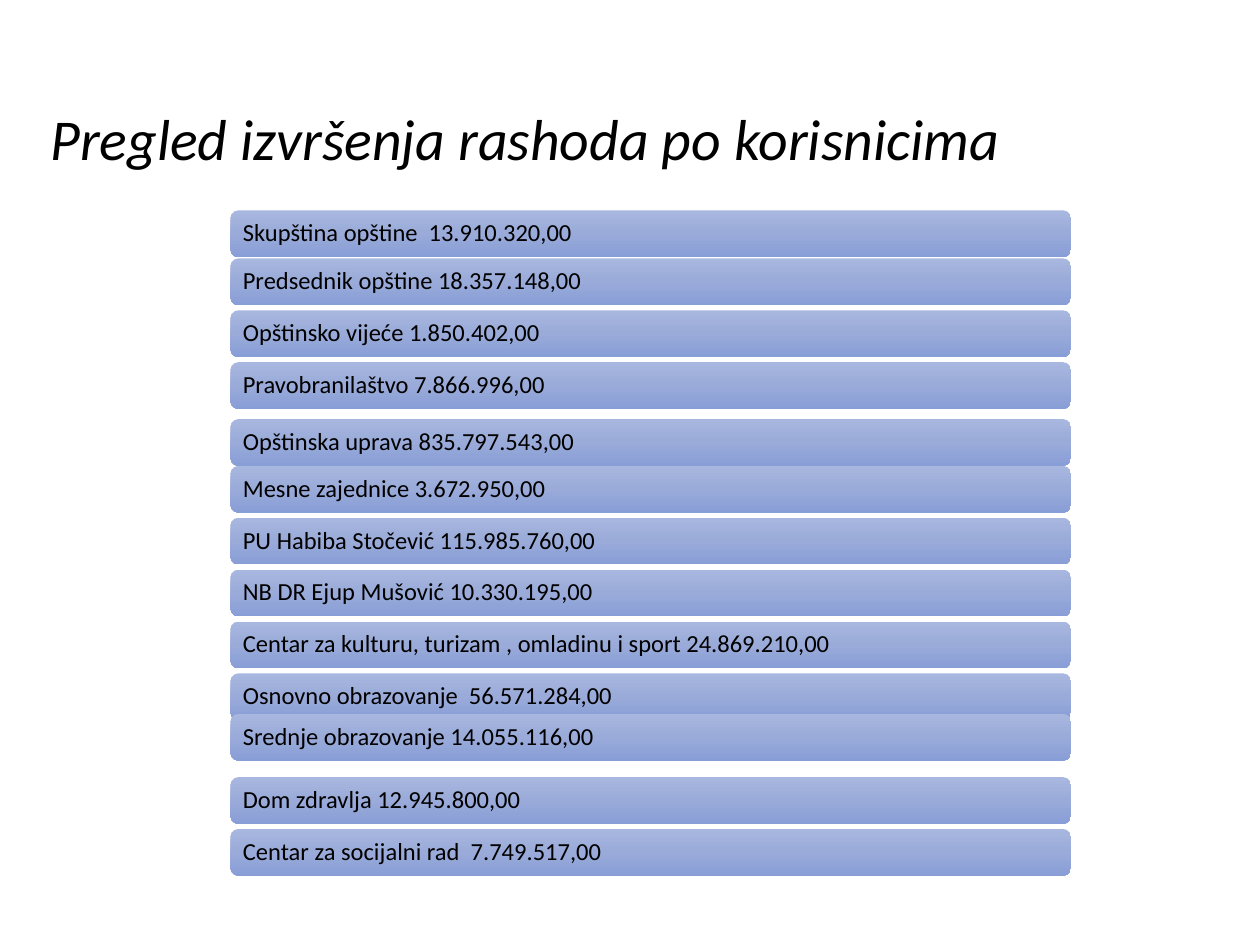
from copy import deepcopy
from dataclasses import dataclass

from pptx import Presentation
from pptx.dml.color import RGBColor
from pptx.enum.shapes import MSO_SHAPE
from pptx.enum.text import MSO_ANCHOR, PP_ALIGN
from pptx.oxml.ns import qn
from pptx.util import Inches, Pt

ROUNDED = MSO_SHAPE.ROUNDED_RECTANGLE
LEFT = PP_ALIGN.LEFT
MIDDLE = MSO_ANCHOR.MIDDLE
BOTTOM = MSO_ANCHOR.BOTTOM
TITLE_ONLY = 5


@dataclass(frozen=True)
class Theme:
    font: str = "Calibri"
    text: str = "000000"
    title_size: int = 33
    bar_size: int = 14
    gradient: tuple[str, ...] = ("A8B7DF", "9AABD9", "889ED7")


@dataclass(frozen=True)
class Bar:
    label: str
    nudge: float = 0


THEME = Theme()
TITLE = "Pregled izvršenja rashoda po korisnicima"
BARS = [
    Bar("Skupština opštine  13.910.320,00", 0.03),
    Bar("Predsednik opštine 18.357.148,00"),
    Bar("Opštinsko vijeće 1.850.402,00"),
    Bar("Pravobranilaštvo 7.866.996,00"),
    Bar("Opštinska uprava 835.797.543,00", 0.04),
    Bar("Mesne zajednice 3.672.950,00"),
    Bar("PU Habiba Stočević 115.985.760,00"),
    Bar("NB DR Ejup Mušović 10.330.195,00"),
    Bar("Centar za kulturu, turizam , omladinu i sport 24.869.210,00"),
    Bar("Osnovno obrazovanje  56.571.284,00"),
    Bar("Srednje obrazovanje 14.055.116,00", -0.09),
    Bar("Dom zdravlja 12.945.800,00"),
    Bar("Centar za socijalni rad  7.749.517,00"),
]
FIRST_TOP, LAST_TOP = 1.64, 6.58
BAR_LEFT, BAR_WIDTH, BAR_HEIGHT = 1.83, 6.67, 0.37
BAR_INSET = 0.08


def apply(target, values: dict) -> None:
    for name, value in values.items():
        setattr(target, name, value)


def write_text(shape, text: str, size: int, anchor, italic: bool = False) -> None:
    frame = shape.text_frame
    frame.text = text
    apply(frame, {"word_wrap": True, "vertical_anchor": anchor})
    paragraph = frame.paragraphs[0]
    apply(paragraph, {"alignment": LEFT, "line_spacing": 0.9})
    font = paragraph.runs[0].font
    apply(font, {"name": THEME.font, "size": Pt(size), "italic": italic})
    font.color.rgb = RGBColor.from_string(THEME.text)


def fill_gradient(shape) -> None:
    shape.fill.gradient()
    shape.fill.gradient_angle = 270
    stop_list = shape.element.find(".//" + qn("a:gsLst"))
    stop_list.insert(1, deepcopy(stop_list[0]))
    for index, (stop, color) in enumerate(zip(shape.fill.gradient_stops, THEME.gradient)):
        stop.position = index / (len(THEME.gradient) - 1)
        stop.color.rgb = RGBColor.from_string(color)


def add_bar(slide, bar: Bar, top: float) -> None:
    box = (BAR_LEFT, top + bar.nudge, BAR_WIDTH, BAR_HEIGHT)
    shape = slide.shapes.add_shape(ROUNDED, *map(Inches, box))
    shape.shadow.inherit = False
    shape.line.fill.background()
    fill_gradient(shape)
    write_text(shape, bar.label, THEME.bar_size, MIDDLE)
    sides = ("margin_left", "margin_top", "margin_right", "margin_bottom")
    apply(shape.text_frame, dict.fromkeys(sides, Inches(BAR_INSET)))


def add_title(slide) -> None:
    title = slide.shapes.title
    apply(title, {
        "left": Inches(0.3),
        "top": Inches(0.25),
        "width": Inches(9.4),
        "height": Inches(1.17),
    })
    write_text(title, TITLE, THEME.title_size, BOTTOM, italic=True)


def main() -> None:
    presentation = Presentation()
    apply(presentation, {"slide_width": Inches(10), "slide_height": Inches(7.5)})
    slide = presentation.slides.add_slide(presentation.slide_layouts[TITLE_ONLY])
    add_title(slide)
    pitch = (LAST_TOP - FIRST_TOP) / (len(BARS) - 1)
    for index, bar in enumerate(BARS):
        add_bar(slide, bar, FIRST_TOP + index * pitch)
    presentation.save("out.pptx")


if __name__ == "__main__":
    main()
